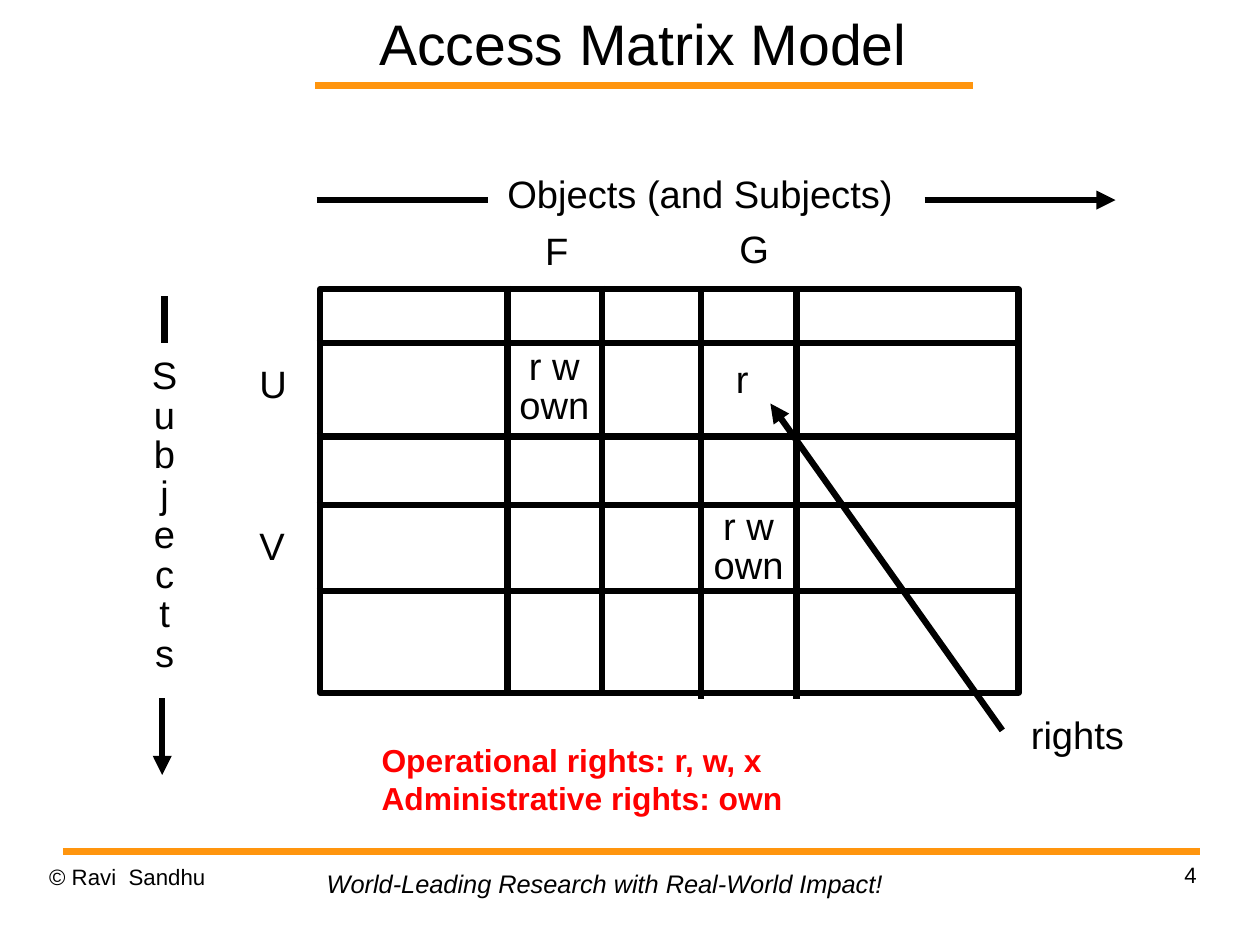
from dataclasses import dataclass

from lxml.etree import SubElement
from pptx import Presentation
from pptx.dml.color import RGBColor
from pptx.enum.shapes import MSO_CONNECTOR as Connector
from pptx.enum.shapes import MSO_SHAPE as Preset
from pptx.enum.text import MSO_ANCHOR as Anchor
from pptx.enum.text import MSO_AUTO_SIZE as AutoSize
from pptx.enum.text import PP_ALIGN as Align
from pptx.oxml.ns import qn
from pptx.slide import Slide
from pptx.text.text import TextFrame
from pptx.util import Pt

BLACK = RGBColor(0x00, 0x00, 0x00)
ORANGE = RGBColor(0xFF, 0x95, 0x0E)
RED = RGBColor(0xFF, 0x00, 0x00)
FONT = "Arial"
STROKE = 4
TIGHT = 0.87
LOOSE = 1.01


@dataclass
class Style:
    size: float = 24
    color: RGBColor = BLACK
    bold: bool = False
    italic: bool = False
    align: Align = Align.LEFT
    spacing: float = TIGHT


@dataclass
class Label:
    text: str
    left: float
    top: float
    width: float
    height: float
    style: Style
    inset: tuple[float, float] = (5, 2)
    wrap: bool = False


@dataclass
class Line:
    start: tuple[float, float]
    end: tuple[float, float]
    arrow: bool = False
    color: RGBColor = BLACK
    width: float = STROKE


MARK = Style()
CENTRED = Style(align=Align.CENTER)
TITLE = Style(size=36, align=Align.CENTER, spacing=1)
FOOTER = Style(size=14, spacing=LOOSE)
NUMBER = Style(size=14, spacing=LOOSE, align=Align.RIGHT)
SLOGAN = Style(size=16, italic=True, spacing=1)
SUMMARY = Style(size=20, color=RED, bold=True, spacing=1)

MATRIX = (201.6, 182.2, 440, 254.2)
ROW_EDGES = [216, 275, 318.2, 372.2]
COLUMN_EDGES = [(319.7, 180), (379.4, 180), (441.4, 182.2), (501.8, 182.2)]
COLUMN_LENGTH = 258.2

LINES = [
    Line((198.7, 54), (612.7, 54), color=ORANGE, width=4.31),
    Line((39.6, 536.4), (756, 536.4), color=ORANGE, width=4.31),
    *[Line((199.4, edge), (643.7, edge)) for edge in ROW_EDGES],
    *[Line((edge, top), (edge, top + COLUMN_LENGTH)) for edge, top in COLUMN_EDGES],
    Line((199.4, 126), (307.4, 126)),
    Line((582.5, 126), (702.7, 126), arrow=True),
    Line((103.7, 186.5), (103.7, 216)),
    Line((102.2, 439.9), (102.2, 488.2), arrow=True),
    Line((631.4, 460.1), (485.3, 254.2), arrow=True),
]

LABELS = [
    Label("Objects (and Subjects)", 314.6, 109.4, 270, 28.8, MARK),
    Label("F", 338.4, 145.4, 24.5, 28.8, MARK),
    Label("G", 460.8, 144, 28.8, 28.8, MARK),
    Label("U", 158.4, 229, 27.4, 28.8, MARK),
    Label("V", 158.4, 331.2, 25.9, 28.8, MARK),
    Label("r w\nown", 320.4, 217.4, 57.6, 54, CENTRED),
    Label("r", 458.6, 226.1, 19.4, 28.8, MARK),
    Label("r w\nown", 442.8, 318.2, 57.6, 54, CENTRED),
    Label("rights", 644.4, 450, 76.3, 28.8, MARK),
    Label("\n".join("Subjects"), 90.7, 223.2, 25.9, 203.8, CENTRED),
    Label("Operational rights: r, w, x\nAdministrative rights: own",
          233.3, 463, 292.3, 55.4, SUMMARY, (7.2, 3.6), True),
    Label("© Ravi  Sandhu", 31, 543.6, 185, 41, FOOTER, (0, 0), True),
    Label("World-Leading Research with Real-World Impact!",
          198.7, 543.6, 365.8, 26.6, SLOGAN, (7.2, 3.6)),
    Label("4", 568.8, 542.2, 185, 41, NUMBER, (0, 0), True),
]


def write_text(frame: TextFrame, text: str, style: Style) -> None:
    frame.text = text
    for para in frame.paragraphs:
        para.alignment = style.align
        para.line_spacing = style.spacing
        para.space_before = Pt(0)
        for span in para.runs:
            span.font.name = FONT
            span.font.size = Pt(style.size)
            span.font.bold = style.bold
            span.font.italic = style.italic
            span.font.color.rgb = style.color


def set_insets(frame: TextFrame, inset: tuple[float, float]) -> None:
    frame.margin_left = frame.margin_right = Pt(inset[0])
    frame.margin_top = frame.margin_bottom = Pt(inset[1])


def draw_title(page: Slide, text: str) -> None:
    title = page.shapes.title
    title.left, title.top, title.width, title.height = Pt(173.5), Pt(0), Pt(463), Pt(54)
    frame = title.text_frame
    frame.word_wrap = True
    frame.auto_size = AutoSize.NONE
    frame.vertical_anchor = Anchor.MIDDLE
    set_insets(frame, (0, 0))
    write_text(frame, text, TITLE)


def draw_label(page: Slide, label: Label) -> None:
    box = page.shapes.add_textbox(
        Pt(label.left), Pt(label.top), Pt(label.width), Pt(label.height))
    frame = box.text_frame
    frame.word_wrap = label.wrap
    set_insets(frame, label.inset)
    write_text(frame, label.text, label.style)


def draw_line(page: Slide, line: Line) -> None:
    connector = page.shapes.add_connector(
        Connector.STRAIGHT, *map(Pt, line.start + line.end))
    connector.line.color.rgb = line.color
    connector.line.width = Pt(line.width)
    if line.arrow:
        SubElement(connector.line._get_or_add_ln(), qn("a:tailEnd"), type="triangle")
    SubElement(connector._element.spPr, qn("a:effectLst"))


def draw_matrix_frame(page: Slide) -> None:
    frame = page.shapes.add_shape(Preset.RECTANGLE, *map(Pt, MATRIX))
    frame.shadow.inherit = False
    frame.fill.background()
    frame.line.color.rgb = BLACK
    frame.line.width = Pt(STROKE)


def main() -> None:
    deck = Presentation()
    deck.slide_width, deck.slide_height = Pt(793.7), Pt(595.28)
    page = deck.slides.add_slide(deck.slide_layouts.get_by_name("Title Only"))
    draw_title(page, "Access Matrix Model")
    draw_matrix_frame(page)
    for line in LINES:
        draw_line(page, line)
    for label in LABELS:
        draw_label(page, label)
    deck.save("out.pptx")


if __name__ == "__main__":
    main()
